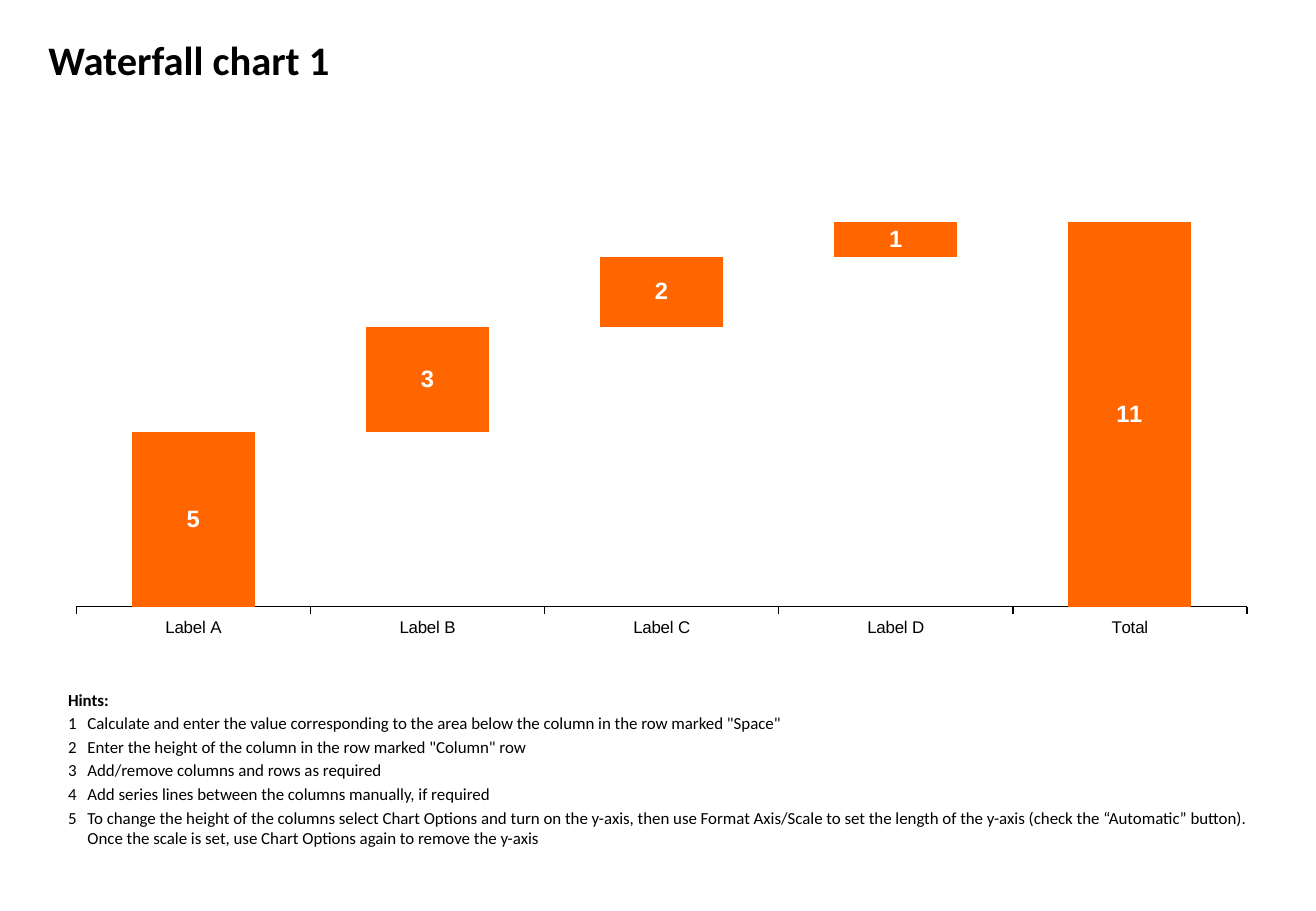
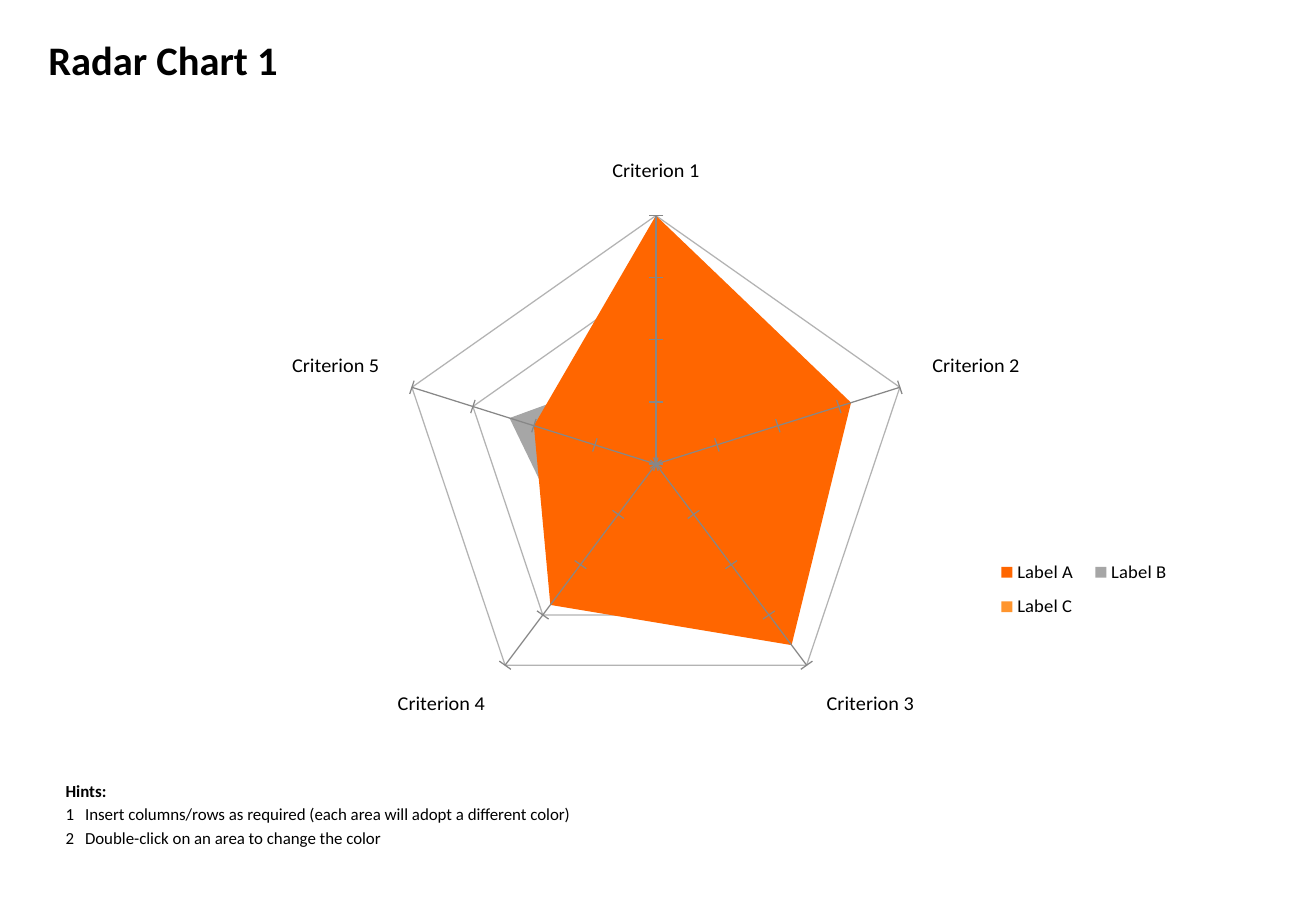
from lxml import etree
from pptx import Presentation
from pptx.chart.data import CategoryChartData
from pptx.dml.color import RGBColor
from pptx.enum.chart import (XL_CHART_TYPE, XL_LABEL_POSITION, XL_LEGEND_POSITION,
                             XL_TICK_LABEL_POSITION, XL_TICK_MARK)
from pptx.enum.text import MSO_ANCHOR
from pptx.oxml import parse_xml
from pptx.oxml.ns import nsdecls, qn
from pptx.util import Inches, Pt

STACKED, RADAR = XL_CHART_TYPE.COLUMN_STACKED, XL_CHART_TYPE.RADAR_FILLED
TICK_OUT, TICK_CROSS, TICK_NONE = XL_TICK_MARK.OUTSIDE, XL_TICK_MARK.CROSS, XL_TICK_MARK.NONE
NO_LABELS = XL_TICK_LABEL_POSITION.NONE
CENTER = XL_LABEL_POSITION.CENTER
LEGEND_RIGHT = XL_LEGEND_POSITION.RIGHT
MIDDLE, BOTTOM = MSO_ANCHOR.MIDDLE, MSO_ANCHOR.BOTTOM

BLACK, WHITE, ORANGE = "000000", "FFFFFF", "FF6600"
GREY, AMBER = "A6A6A6", "FF952E"
AXIS_GREY, GRID_GREY = "878787", "B3B3B3"


def set_font(font, name, size, color, bold=False):
    font.name, font.size, font.bold = name, Pt(size), bold
    font.color.rgb = RGBColor.from_string(color)


def place(parent, index, fractions, inner=False):
    """Give a plot area or legend a manual layout in fractions of the chart."""
    for old in parent.findall(qn("c:layout")):
        parent.remove(old)
    layout = parse_xml(f"<c:layout {nsdecls('c')}><c:manualLayout/></c:layout>")
    settings = [("layoutTarget", "inner")] if inner else []
    settings += [("xMode", "edge"), ("yMode", "edge")] + list(zip("xywh", fractions))
    for tag, value in settings:
        etree.SubElement(layout[0], qn(f"c:{tag}")).set("val", str(value))
    parent.insert(index, layout)


slides = [
    {
        "title": "Waterfall chart 1",
        "kind": STACKED,
        "chart_box": (0.52, 1.43, 9.85, 4.14),
        "plot_area": (0.011, 0.026, 0.978, 0.835),
        "font": ("Arial", 16.7, BLACK, True),
        "category_font": ("Arial", 10, BLACK),
        "scale": (12, 2),
        "categories": ["Label A", "Label B", "Label C", "Label D", "Total"],
        "series": [("Series 1", (None, 5, 8, 10, None), None),
                   ("Series 2", (5, 3, 2, 1, 11), ORANGE)],
        "hints_box": (0.56, 5.66, 9.72, 1.32),
        "hints": [
            'Calculate and enter the value corresponding to the area below the column '
            'in the row marked "Space"',
            'Enter the height of the column in the row marked "Column" row',
            "Add/remove columns and rows as required",
            "Add series lines between the columns manually, if required",
            "To change the height of the columns select Chart Options and turn on the y-axis, "
            "then use Format Axis/Scale to set the length of the y-axis (check the “Automatic” "
            "button). Once the scale is set, use Chart Options again to remove the y-axis",
        ],
    },
    {
        "title": "Radar Chart 1",
        "kind": RADAR,
        "chart_box": (2.09, 1.31, 7.72, 4.59),
        "plot_area": (0.132, 0.073, 0.593, 0.92),
        "font": ("Calibri", 18, BLACK),
        "category_font": ("Calibri", 12, BLACK),
        "scale": (100, 25),
        "categories": [f"Criterion {number}" for number in range(1, 6)],
        "series": [("Label A", (100, 80, 90, 70, 50), ORANGE),
                   ("Label B", (40, 60, 80, 50, 60), GREY),
                   ("Label C", (30, 40, 10, 40, 30), AMBER)],
        "hints_box": (0.54, 6.42, 10.08, 0.56),
        "hints": [
            "Insert columns/rows as required (each area will adopt a different color)",
            "Double-click on an area to change the color",
        ],
    },
]

deck = Presentation()
deck.slide_width, deck.slide_height = Inches(10.83), Inches(7.5)

for content in slides:
    page = deck.slides.add_slide(deck.slide_layouts[6])

    title = page.shapes.add_textbox(Inches(0.3), Inches(0.32), Inches(10.42), Inches(0.33))
    title_frame = title.text_frame
    title_frame.word_wrap, title_frame.vertical_anchor = True, MIDDLE
    title_frame.text = content["title"]
    set_font(title_frame.paragraphs[0].runs[0].font, "Calibri", 24, BLACK, True)

    data = CategoryChartData()
    data.categories = content["categories"]
    for name, values, _ in content["series"]:
        data.add_series(name, values)
    frame = page.shapes.add_chart(content["kind"], *map(Inches, content["chart_box"]), data)
    chart = frame.chart
    chart.has_title = chart.has_legend = False
    set_font(chart.font, *content["font"])
    plot = chart.plots[0]
    plot.vary_by_categories = False
    for series, (_, _, color) in zip(plot.series, content["series"]):
        if color:
            series.format.fill.solid()
            series.format.fill.fore_color.rgb = RGBColor.from_string(color)
        else:
            series.format.fill.background()
        series.format.line.fill.background()

    plot_area = chart.element.find(f".//{qn('c:plotArea')}")
    place(plot_area, 0, content["plot_area"], inner=True)
    plot_area.append(parse_xml(
        f"<c:spPr {nsdecls('c', 'a')}><a:noFill/><a:ln><a:noFill/></a:ln></c:spPr>"))

    category_axis, value_axis = chart.category_axis, chart.value_axis
    set_font(category_axis.tick_labels.font, *content["category_font"])
    category_axis.major_tick_mark = TICK_OUT
    value_axis.minimum_scale = 0
    value_axis.maximum_scale, value_axis.major_unit = content["scale"]

    if content["kind"] == STACKED:
        plot.gap_width, plot.overlap = 90, 100
        category_axis.format.line.width = Pt(1)
        category_axis.format.line.color.rgb = RGBColor.from_string(BLACK)
        value_axis.has_major_gridlines = value_axis.visible = False
        labels = plot.series[1].data_labels
        labels.show_value, labels.position = True, CENTER
        set_font(labels.font, "Arial", 14, WHITE, True)
    else:
        value_axis.major_tick_mark, value_axis.minor_tick_mark = TICK_CROSS, TICK_NONE
        value_axis.tick_label_position = NO_LABELS
        value_axis.has_major_gridlines = True
        for line, color in ((value_axis.format.line, AXIS_GREY),
                            (value_axis.major_gridlines.format.line, GRID_GREY)):
            line.width = Pt(0.75)
            line.color.rgb = RGBColor.from_string(color)
        chart.has_legend = True
        legend = chart.legend
        legend.position, legend.include_in_layout = LEGEND_RIGHT, False
        set_font(legend.font, "Calibri", 11, BLACK)
        place(chart.element.find(f".//{qn('c:legend')}"), 1, (0.78, 0.69, 0.21, 0.15))

    hints = page.shapes.add_textbox(*map(Inches, content["hints_box"]))
    hints_frame = hints.text_frame
    hints_frame.word_wrap, hints_frame.vertical_anchor = True, BOTTOM
    hints_frame.margin_left = hints_frame.margin_right = 0
    hints_frame.margin_top = hints_frame.margin_bottom = 0
    numbered = [f"{number}\t{hint}" for number, hint in enumerate(content["hints"], 1)]
    hints_frame.text = "\n".join(["Hints:"] + numbered)
    for index, para in enumerate(hints_frame.paragraphs):
        para.space_before = para.space_after = Pt(1)
        properties = para._p.get_or_add_pPr()
        properties.set("marL", str(Inches(0.16)))
        properties.set("indent", str(Inches(-0.16)))
        set_font(para.runs[0].font, "Calibri", 10, BLACK, index == 0)

deck.save("out.pptx")
